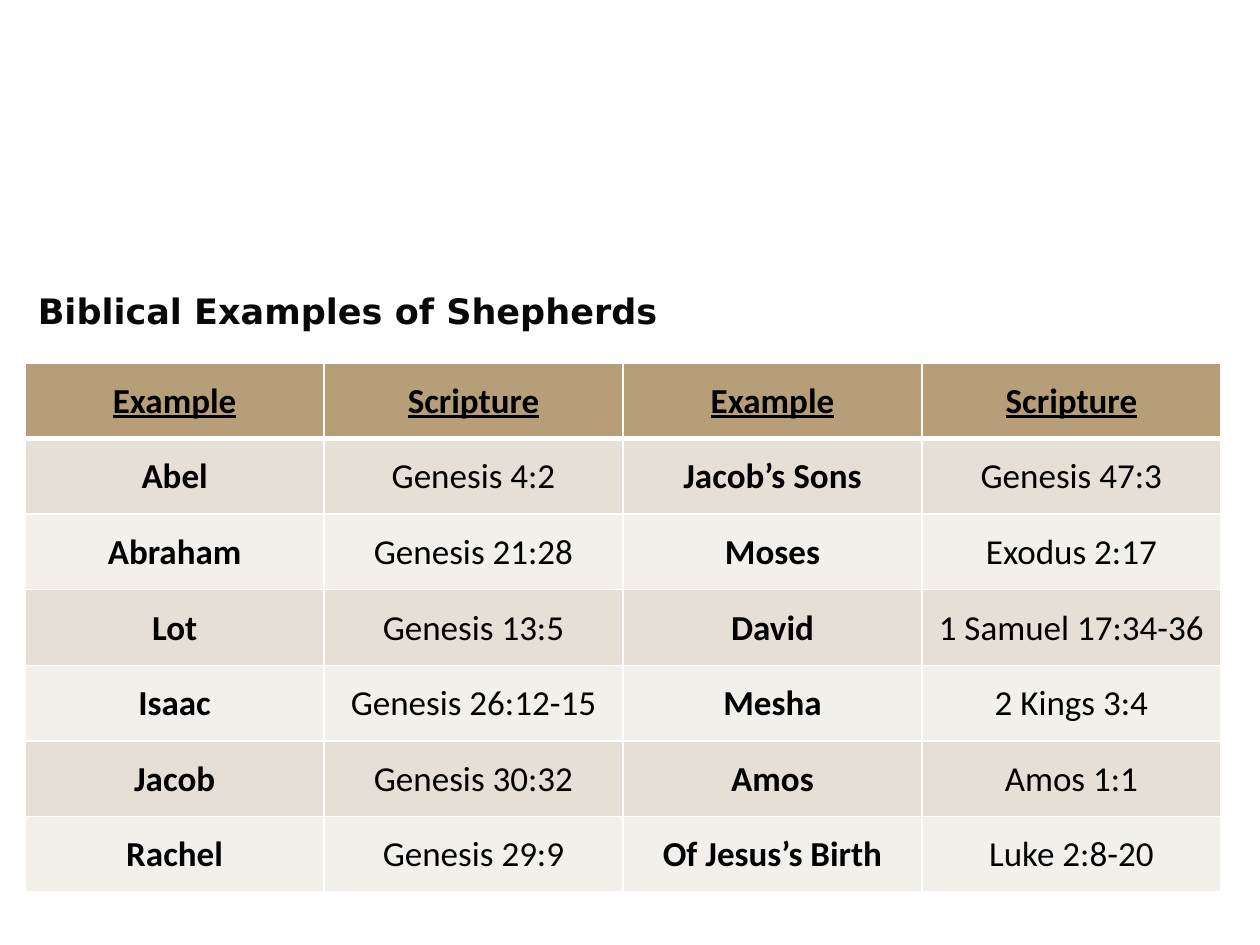
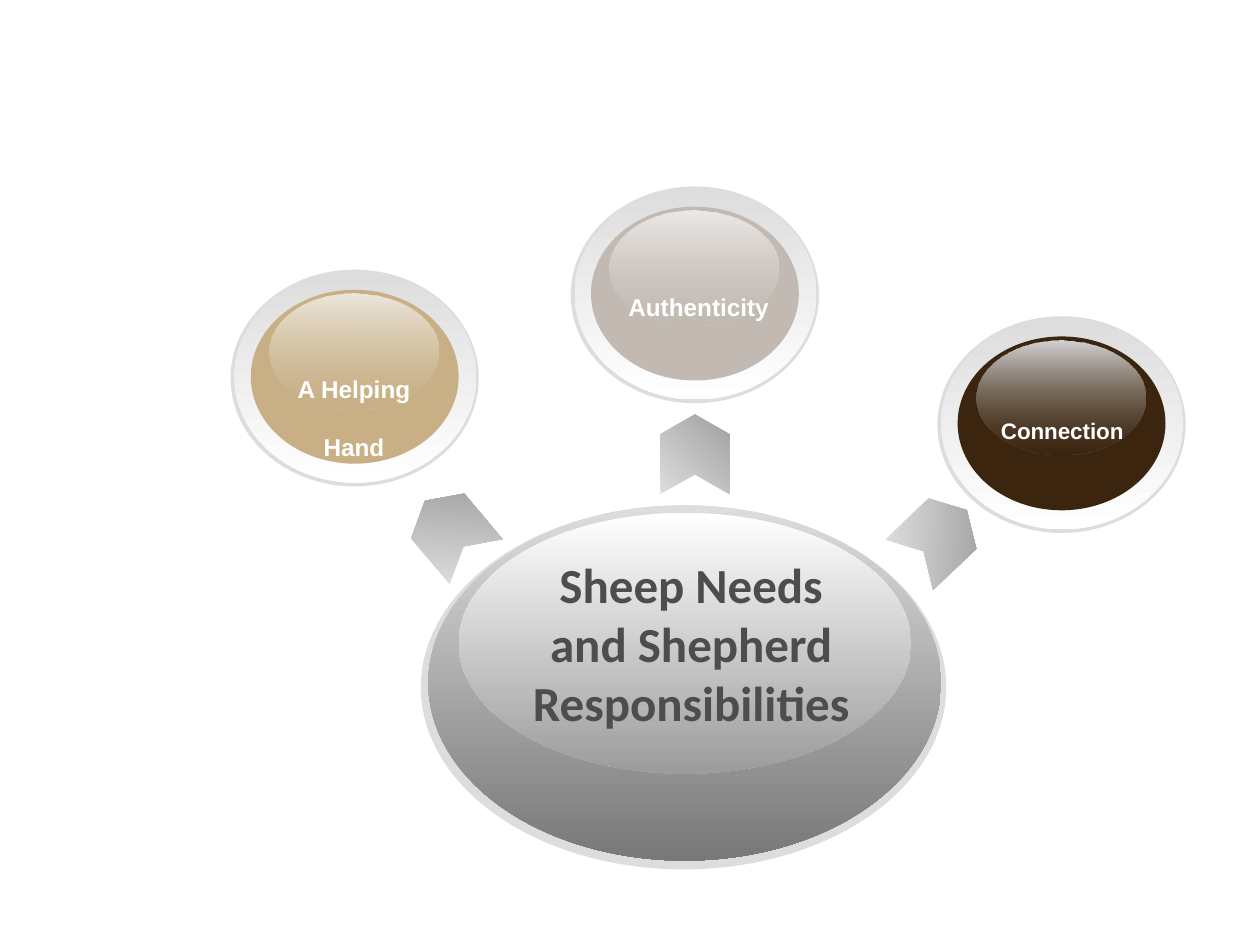
from lxml import etree
from pptx import Presentation
from pptx.dml.color import RGBColor
from pptx.enum.shapes import MSO_SHAPE
from pptx.enum.text import MSO_ANCHOR, MSO_AUTO_SIZE, PP_ALIGN
from pptx.oxml.ns import qn
from pptx.util import Inches, Pt

OVAL, CHEVRON = MSO_SHAPE.OVAL, MSO_SHAPE.CHEVRON
TOP, MIDDLE = MSO_ANCHOR.TOP, MSO_ANCHOR.MIDDLE
LEFT, CENTER = PP_ALIGN.LEFT, PP_ALIGN.CENTER
NO_FIT = MSO_AUTO_SIZE.NONE

WHITE = RGBColor(0xFF, 0xFF, 0xFF)
BLACK = RGBColor(0x00, 0x00, 0x00)
HEADING = RGBColor(0x08, 0x08, 0x08)
HUB_TEXT = RGBColor(0x4D, 0x4D, 0x4D)
SILVER = RGBColor(0xDD, 0xDD, 0xDD)
ARROW_GREY = RGBColor(0xA0, 0xA0, 0xA0)
HUB_GREY = RGBColor(0x78, 0x78, 0x78)
GLOSS_GREY = RGBColor(0x9C, 0x9C, 0x9C)
HEADER_TAN = RGBColor(0xB5, 0x9E, 0x78)
BANDS = [RGBColor(0xF3, 0xF0, 0xEC), RGBColor(0xE5, 0xDF, 0xD6)]
TAN = RGBColor(0xC8, 0xAF, 0x85)
TAN_LIGHT = RGBColor(0xED, 0xE7, 0xDD)
BROWN = RGBColor(0x3B, 0x25, 0x0F)
BROWN_LIGHT = RGBColor(0xD4, 0xD3, 0xD3)
TAUPE = RGBColor(0xC2, 0xBA, 0xB2)
TAUPE_LIGHT = RGBColor(0xEC, 0xE9, 0xE7)


def write(shape, text, box, font, size, color, align):
    """Place a title or text box and give it bold text."""
    shape.left, shape.top, shape.width, shape.height = map(Inches, box)
    frame = shape.text_frame
    frame.text = text
    frame.word_wrap = True
    frame.auto_size = NO_FIT
    frame.vertical_anchor = TOP
    paragraph = frame.paragraphs[0]
    paragraph.alignment = align
    run = paragraph.runs[0]
    run.font.name, run.font.size, run.font.bold = font, Pt(size), True
    run.font.color.rgb = color
    return run


def draw(slide, preset, box, colors, angle=270):
    """Add a borderless shape, solid for one colour, gradient for two."""
    shape = slide.shapes.add_shape(preset, *map(Inches, box))
    shape.shadow.inherit = False
    shape.line.fill.background()
    if len(colors) == 1:
        shape.fill.solid()
        shape.fill.fore_color.rgb = colors[0]
    else:
        shape.fill.gradient()
        shape.fill.gradient_angle = angle
        for stop, color in zip(shape.fill.gradient_stops, colors):
            stop.color.rgb = color
    return shape


prs = Presentation()
prs.slide_width, prs.slide_height = Inches(10), Inches(7.5)
title_only = prs.slide_layouts[5]

# Slide 1: shepherds in scripture
shepherds = prs.slides.add_slide(title_only)
write(shepherds.shapes.title, "Biblical Examples of Shepherds",
      (0.2, 2.25, 7.13, 0.79), "DejaVu Sans", 20, HEADING, LEFT)

examples = [
    ("Example", "Scripture", "Example", "Scripture"),
    ("Abel", "Genesis 4:2", "Jacob’s Sons", "Genesis 47:3"),
    ("Abraham", "Genesis 21:28", "Moses", "Exodus 2:17"),
    ("Lot", "Genesis 13:5", "David", "1 Samuel 17:34-36"),
    ("Isaac", "Genesis 26:12-15", "Mesha", "2 Kings 3:4"),
    ("Jacob", "Genesis 30:32", "Amos", "Amos 1:1"),
    ("Rachel", "Genesis 29:9", "Of Jesus’s Birth", "Luke 2:8-20"),
]
table = shepherds.shapes.add_table(
    len(examples), 4, Inches(0.2), Inches(2.88), Inches(9.49), Inches(4.2)).table
for r, entries in enumerate(examples):
    for c, entry in enumerate(entries):
        cell = table.cell(r, c)
        cell.text = entry
        cell.vertical_anchor = MIDDLE
        cell.margin_left = cell.margin_right = cell.margin_top = Inches(0.01)
        cell.margin_bottom = 0
        cell.fill.solid()
        cell.fill.fore_color.rgb = BANDS[r % 2] if r else HEADER_TAN
        paragraph = cell.text_frame.paragraphs[0]
        paragraph.alignment = CENTER
        font = paragraph.runs[0].font
        font.name, font.size = "Calibri", Pt(20)
        font.color.rgb = BLACK
        font.bold = r == 0 or c % 2 == 0
        font.underline = r == 0
        # White borders, thicker under the header
        borders = [("a:lnL", 1), ("a:lnR", 1),
                   ("a:lnT", 3 if r == 1 else 1), ("a:lnB", 3 if r == 0 else 1)]
        tc_pr = cell._tc.get_or_add_tcPr()
        for i, (side, points) in enumerate(borders):
            border = etree.Element(qn(side), w=str(Pt(points)))
            solid = etree.SubElement(border, qn("a:solidFill"))
            etree.SubElement(solid, qn("a:srgbClr"), val=str(WHITE))
            tc_pr.insert(i, border)

# Slide 2: needs and responsibilities
needs = prs.slides.add_slide(title_only)

# Arrows from the hub to each need
for left, top, rotation in [(5.2, 3.33, 270), (3.26, 3.94, 229.9), (7.13, 3.99, 316.5)]:
    arrow = draw(needs, CHEVRON, (left, top, 0.63, 0.55), [SILVER, ARROW_GREY], 315)
    arrow.rotation = rotation
    arrow.adjustments[0] = 0.285

# Hub, with the title in front of it
draw(needs, OVAL, (3.34, 4.01, 4.17, 2.89), [SILVER])
draw(needs, OVAL, (3.4, 4.01, 4.07, 2.82), [SILVER, HUB_GREY])
draw(needs, OVAL, (3.64, 4.07, 3.59, 2.07), [WHITE, GLOSS_GREY])
hub_title = needs.shapes.title
write(hub_title, "Sheep Needs and Shepherd Responsibilities",
      (4.08, 4.35, 2.81, 1.51), "Calibri", 28, HUB_TEXT, CENTER)
needs.shapes._spTree.append(hub_title._element)

# Glossy balls: position, colours, label, label box, label size
balls = [
    (1.83, 2.14, TAN, TAN_LIGHT, "A Helping Hand", (2.14, 2.7, 1.34, 0.64), 24),
    (7.44, 2.51, BROWN, BROWN_LIGHT, "Connection", (7.76, 3.06, 1.34, 0.35), 22),
    (4.53, 1.48, TAUPE, TAUPE_LIGHT, "Authenticity", (4.74, 2.05, 1.61, 0.37), 24),
]
for x, y, color, light, need, label_box, size in balls:
    layers = [
        (0, 0, 1.97, 1.72, [SILVER]),
        (0.03, 0.01, 1.92, 1.68, [SILVER, WHITE]),
        (0.16, 0.16, 1.65, 1.38, [color]),
        (0.31, 0.19, 1.34, 0.91, [light, color]),
    ]
    for dx, dy, width, height, colors in layers:
        gloss = draw(needs, OVAL, (x + dx, y + dy, width, height), colors)
    # The gloss fades out towards its lower edge
    fade = gloss._element.spPr.findall(".//" + qn("a:srgbClr"))[-1]
    etree.SubElement(fade, qn("a:alpha"), val="37000")
    label = needs.shapes.add_textbox(0, 0, 0, 0)
    run = write(label, need, label_box, "Arial", size, WHITE, CENTER)
    run._r.get_or_add_rPr().set("baseline", "-25000")

prs.save("out.pptx")
